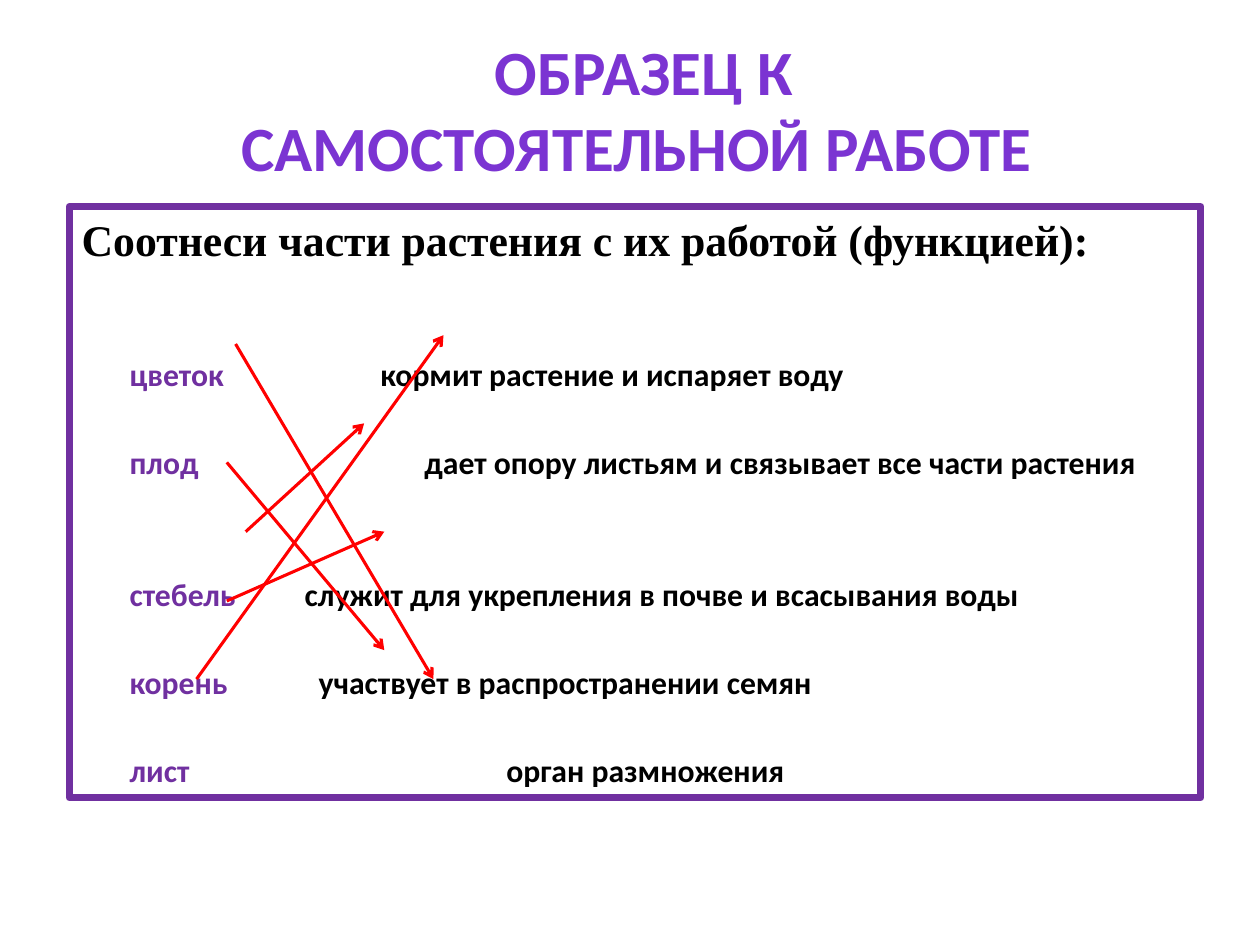
"""Build the answer-key slide that matches plant parts to their functions."""
import pptx
import pptx.util
import pptx.dml.color
import pptx.enum.shapes
import pptx.enum.text
import pptx.oxml
import pptx.oxml.ns

Inches, Pt = pptx.util.Inches, pptx.util.Pt

COLORS = {"title": "7B34D2", "term": "7030A0", "text": "000000", "arrow": "FF0000"}
TITLE_LINES = ["ОБРАЗЕЦ К", "САМОСТОЯТЕЛЬНОЙ РАБОТЕ "]
HEADING = "Соотнеси части растения с их работой (функцией):"
TERM_TAB = 0.38
ROW_GAP, WIDE_GAP = 28.6, 53.8
# term, function, tab stop of the function in inches, space before in points
ROWS = [
    ("цветок", "кормит растение и испаряет воду", 2.37, 51),
    ("плод", "дает опору листьям и связывает все части растения", 2.72, ROW_GAP),
    ("стебель", "служит для укрепления в почве и всасывания воды", 1.77, WIDE_GAP),
    ("корень", "участвует в распространении семян", 1.88, ROW_GAP),
    ("лист", "орган размножения", 3.37, ROW_GAP),
]
ARROWS = [
    (1.87, 2.73, 3.44, 5.39),
    (1.8, 3.67, 3.05, 5.16),
    (1.95, 4.22, 2.89, 3.36),
    (1.56, 5.39, 3.52, 2.66),
    (1.8, 4.77, 3.05, 4.22),
]


def rgb(name):
    return pptx.dml.color.RGBColor.from_string(COLORS[name])


def add_child(parent, tag, **attributes):
    child = pptx.oxml.parse_xml(f"<a:{tag} {pptx.oxml.ns.nsdecls('a')}/>")
    for key, value in attributes.items():
        child.set(key, str(value))
    parent.append(child)
    return child


def add_run(paragraph, text, size, color, font="Calibri"):
    run = paragraph.add_run()
    run.text = text
    run.font.size = Pt(size)
    run.font.name = font
    run.font.bold = True
    run.font.color.rgb = rgb(color)


def add_title(slide):
    shape = slide.shapes.add_textbox(Inches(0.86), Inches(0.47), Inches(8.5), Inches(0.78))
    frame = shape.text_frame
    frame.word_wrap = True
    frame.vertical_anchor = pptx.enum.text.MSO_ANCHOR.MIDDLE
    paragraph = frame.paragraphs[0]
    paragraph.alignment = pptx.enum.text.PP_ALIGN.CENTER
    for index, line in enumerate(TITLE_LINES):
        if index:
            paragraph.add_line_break()
        add_run(paragraph, line, 36, "title")


def add_task(slide):
    shape = slide.shapes.add_shape(
        pptx.enum.shapes.MSO_SHAPE.RECTANGLE,
        Inches(0.55), Inches(1.64), Inches(8.98), Inches(4.69))
    shape.shadow.inherit = False
    shape.fill.background()
    shape.line.color.rgb = rgb("term")
    shape.line.width = Pt(4.25)
    frame = shape.text_frame
    frame.word_wrap = True
    frame.vertical_anchor = pptx.enum.text.MSO_ANCHOR.TOP
    heading = frame.paragraphs[0]
    heading.alignment = pptx.enum.text.PP_ALIGN.LEFT
    add_run(heading, HEADING, 25, "text", "Times New Roman")
    for term, function, function_tab, gap in ROWS:
        paragraph = frame.add_paragraph()
        paragraph.alignment = pptx.enum.text.PP_ALIGN.LEFT
        paragraph.space_before = Pt(gap)
        tabs = add_child(paragraph._p.get_or_add_pPr(), "tabLst")
        for position in (TERM_TAB, function_tab):
            add_child(tabs, "tab", pos=Inches(position), algn="l")
        add_run(paragraph, "\t" + term, 18.1, "term")
        add_run(paragraph, "\t" + function, 18.1, "text")


def add_arrow(slide, points):
    connector = slide.shapes.add_connector(
        pptx.enum.shapes.MSO_CONNECTOR.STRAIGHT, *map(Inches, points))
    connector.line.color.rgb = rgb("arrow")
    connector.line.width = Pt(1.75)
    add_child(connector.line._get_or_add_ln(), "tailEnd", type="arrow")
    add_child(connector._element.spPr, "effectLst")


def main():
    presentation = pptx.Presentation()
    presentation.slide_width = Inches(10)
    presentation.slide_height = Inches(7.5)
    slide = presentation.slides.add_slide(presentation.slide_layouts[6])
    add_title(slide)
    add_task(slide)
    for points in ARROWS:
        add_arrow(slide, points)
    presentation.save("out.pptx")


if __name__ == "__main__":
    main()
